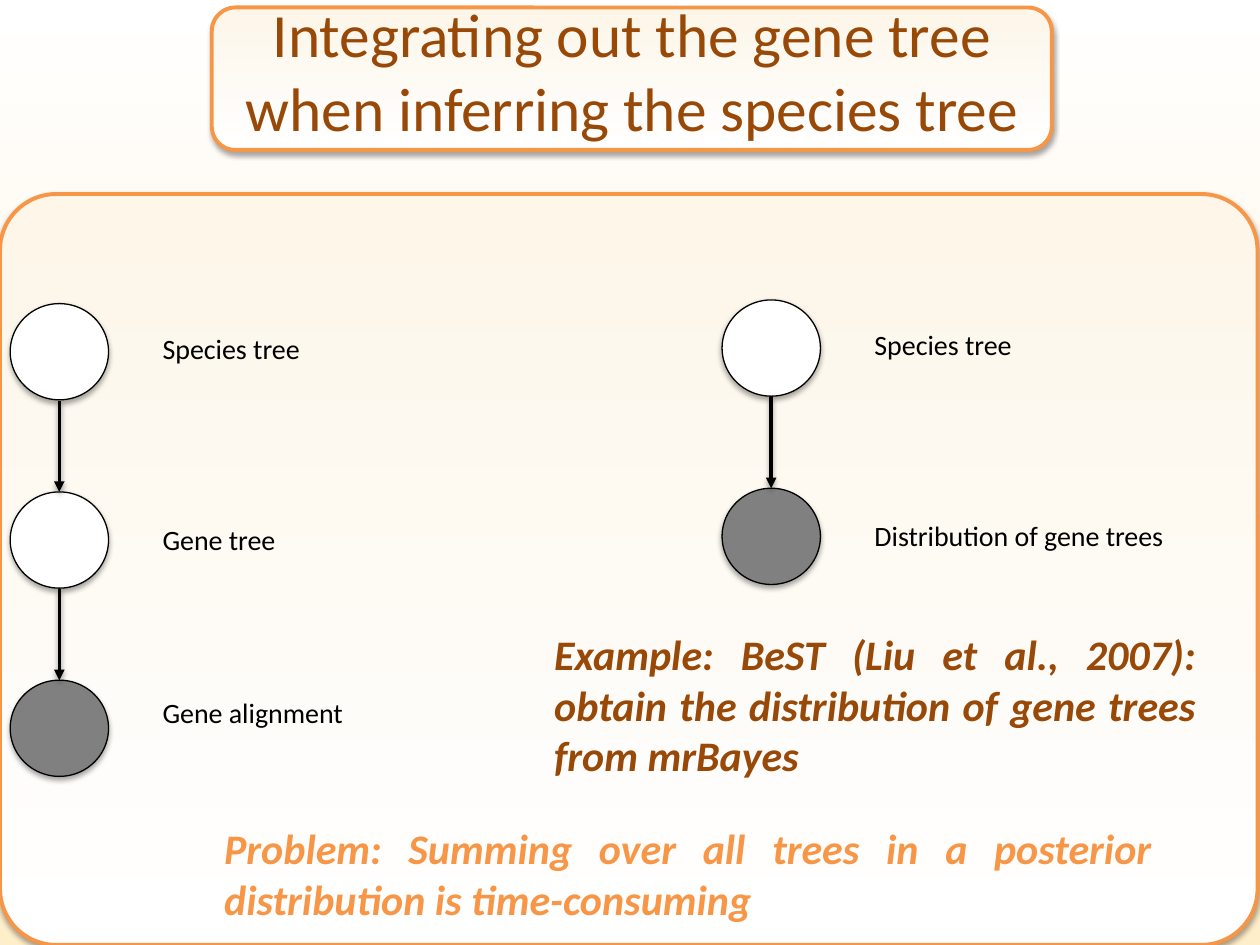
from lxml import etree
from pptx import Presentation
from pptx.dml.color import RGBColor
from pptx.enum.shapes import MSO_CONNECTOR, MSO_SHAPE
from pptx.enum.text import MSO_ANCHOR, PP_ALIGN
from pptx.oxml.ns import qn
from pptx.util import Pt

ROUNDED, OVAL = MSO_SHAPE.ROUNDED_RECTANGLE, MSO_SHAPE.OVAL
STRAIGHT = MSO_CONNECTOR.STRAIGHT
TOP, MIDDLE = MSO_ANCHOR.TOP, MSO_ANCHOR.MIDDLE
LEFT, CENTER, JUSTIFY = PP_ALIGN.LEFT, PP_ALIGN.CENTER, PP_ALIGN.JUSTIFY

THEME = {
    "font": "Calibri",
    "black": "000000",
    "brown": "984807",
    "orange": "F79646",
    "hidden": "FFFFFF",
    "observed": "808080",
    "background": ("FFFFFF", "FFEECA"),
    "panel": ("FFFFFF", "FDF6E9"),
    "title_size": 35.1,
    "label_size": 16,
    "note_size": 24,
}

TITLE = "Integrating out the gene tree when inferring the species tree"
TITLE_BOX = (121, 0, 480, 80)
PANELS = [((121, 4.3, 480, 81.4), 0.1667), ((0, 110.9, 718.6, 429.1), 0.075)]

MODELS = [
    {"left": 5.8, "top": 173.5, "nodes": [
        ("Species tree", "hidden", 12.3),
        ("Gene tree", "hidden", 13.7),
        ("Gene alignment", "observed", 5),
    ]},
    {"left": 412.6, "top": 171.4, "nodes": [
        ("Species tree", "hidden", 12.3),
        ("Distribution of gene trees", "observed", 13.7),
    ]},
]
NOTES = [
    ("Example: BeST (Liu et al., 2007): obtain the distribution of gene trees from mrBayes",
     (309.6, 355.7, 380.9, 94.3), "brown"),
    ("Problem: Summing over all trees in a posterior distribution is time-consuming",
     (121, 466.6, 544.3, 65.5), "orange"),
]

NODE_WIDTH, NODE_HEIGHT, NODE_PITCH = 56.2, 55, 107.6
ARROW_LENGTH = 52
LABEL_OFFSET, LABEL_WIDTH, LABEL_HEIGHT = 80, 198, 26.6


def color(name):
    return RGBColor.from_string(THEME[name])


def points(values):
    return [Pt(value) for value in values]


def apply_gradient(fill, colors, angle):
    fill.gradient()
    fill.gradient_angle = angle
    for stop, value in zip(fill.gradient_stops, colors):
        stop.color.rgb = RGBColor.from_string(value)


def add_shadow(shape, distance, opacity):
    properties = shape._element.spPr
    for old in properties.findall(qn("a:effectLst")):
        properties.remove(old)
    effects = etree.SubElement(properties, qn("a:effectLst"))
    shadow = etree.SubElement(effects, qn("a:outerShdw"), {
        "blurRad": str(Pt(3.15)), "dist": str(Pt(distance)),
        "dir": "5400000", "rotWithShape": "0"})
    shade = etree.SubElement(shadow, qn("a:srgbClr"), val=THEME["black"])
    etree.SubElement(shade, qn("a:alpha"), val=str(opacity * 1000))


def set_line(shape, name, width):
    shape.line.color.rgb = color(name)
    shape.line.width = Pt(width)


def add_panel(shapes, box, corner):
    panel = shapes.add_shape(ROUNDED, *points(box))
    panel.adjustments[0] = corner
    apply_gradient(panel.fill, THEME["panel"], 90)
    set_line(panel, "orange", 2.25)
    add_shadow(panel, 1.8, 35)


def add_text(shapes, text, box, color_name, size, alignment=LEFT, anchor=TOP, **emphasis):
    frame = shapes.add_textbox(*points(box)).text_frame
    frame.word_wrap = True
    frame.vertical_anchor = anchor
    paragraph = frame.paragraphs[0]
    paragraph.alignment = alignment
    run = paragraph.add_run()
    run.text = text
    formats = {"name": THEME["font"], "size": Pt(THEME[size]), **emphasis}
    for attribute, value in formats.items():
        setattr(run.font, attribute, value)
    run.font.color.rgb = color(color_name)


def add_node(shapes, left, top, fill_name):
    node = shapes.add_shape(OVAL, *points((left, top, NODE_WIDTH, NODE_HEIGHT)))
    node.fill.solid()
    node.fill.fore_color.rgb = color(fill_name)
    set_line(node, "black", 0.75)
    add_shadow(node, 1.8, 35)


def add_arrow(shapes, center, end):
    arrow = shapes.add_connector(
        STRAIGHT, *points((center, end - ARROW_LENGTH, center, end)))
    set_line(arrow, "black", 2)
    etree.SubElement(arrow.line._get_or_add_ln(), qn("a:tailEnd"), type="triangle")
    add_shadow(arrow, 1.6, 38)


def add_model(slide, model):
    shapes = slide.shapes.add_group_shape().shapes
    left = model["left"]
    for index, (label, fill_name, label_drop) in enumerate(model["nodes"]):
        top = model["top"] + index * NODE_PITCH
        add_node(shapes, left, top, fill_name)
        if index:
            add_arrow(shapes, left + NODE_WIDTH / 2, top)
        box = (left + LABEL_OFFSET, top + label_drop, LABEL_WIDTH, LABEL_HEIGHT)
        add_text(shapes, label, box, "black", "label_size")


def main():
    presentation = Presentation()
    presentation.slide_width, presentation.slide_height = Pt(720), Pt(540)
    slide = presentation.slides.add_slide(presentation.slide_layouts[6])
    apply_gradient(slide.background.fill, THEME["background"], 270)
    for box, corner in PANELS:
        add_panel(slide.shapes, box, corner)
    add_text(slide.shapes, TITLE, TITLE_BOX, "brown", "title_size", CENTER, MIDDLE)
    for model in MODELS:
        add_model(slide, model)
    for text, box, color_name in NOTES:
        add_text(slide.shapes, text, box, color_name, "note_size", JUSTIFY,
                 bold=True, italic=True)
    presentation.save("out.pptx")


if __name__ == "__main__":
    main()
